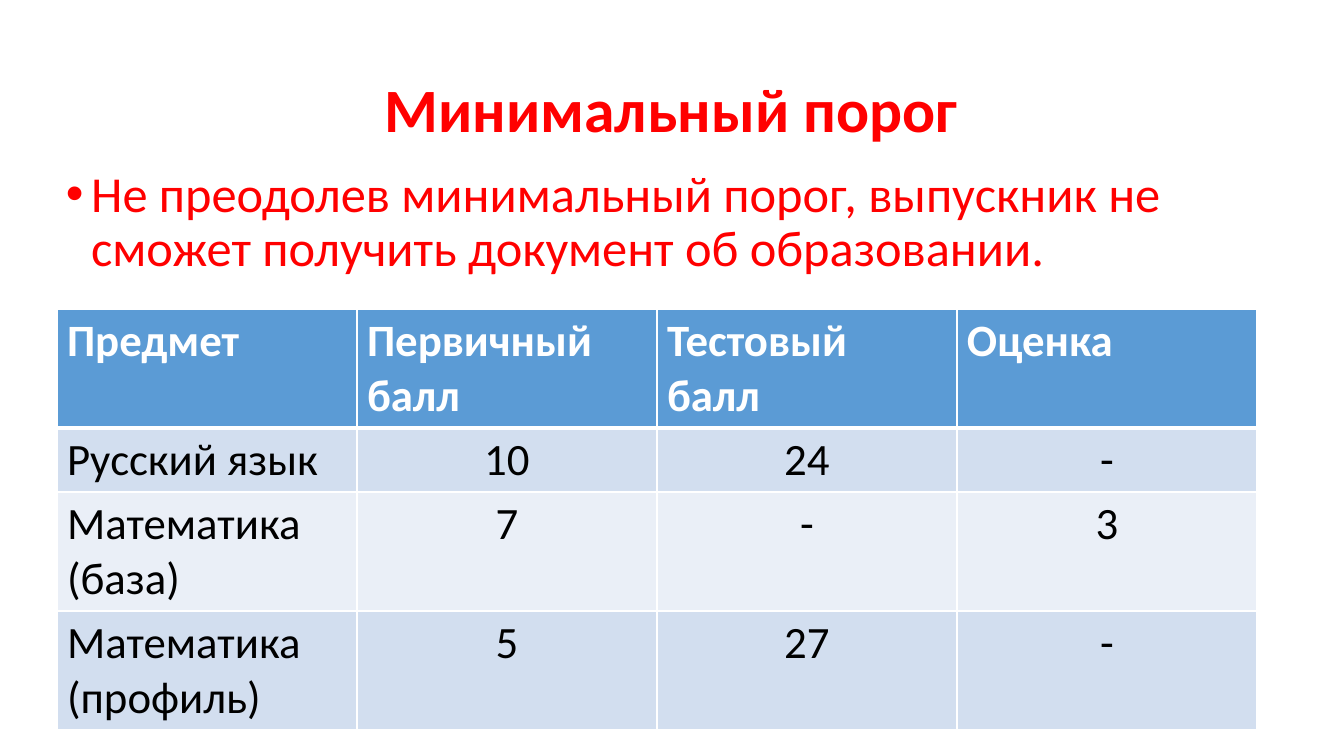
"""Builds the slide on minimum exam scores."""
from lxml import etree
from pptx import Presentation
from pptx.dml.color import RGBColor
from pptx.enum.text import MSO_ANCHOR, PP_ALIGN
from pptx.oxml.ns import qn
from pptx.util import Emu, Pt

LEFT, CENTER = PP_ALIGN.LEFT, PP_ALIGN.CENTER
TOP, MIDDLE = MSO_ANCHOR.TOP, MSO_ANCHOR.MIDDLE
PX = 914400 / 100.8
COLORS = {
    "accent": "FF0000",
    "header": "5B9BD5",
    "odd": "D2DEEF",
    "even": "EAEFF7",
    "white": "FFFFFF",
    "black": "000000",
}
SCORES = [
    ["Предмет", "Первичный балл", "Тестовый балл", "Оценка"],
    ["Русский язык", "10", "24", "-"],
    ["Математика (база)", "7", "-", "3"],
    ["Математика (профиль)", "5", "27", "-"],
]
ROW_HEIGHTS = [119, 64, 119, 119]
COLUMN_WIDTH = 300


def px(length):
    return Emu(round(length * PX))


class SlideBuilder:
    """Holds the text style and the current slide."""

    def __init__(self, slide, font):
        self.slide = slide
        self.font = font

    def format(self, paragraph, size, color, bold=False, align=LEFT):
        paragraph.alignment = align
        for run in paragraph.runs:
            run.font.name = self.font
            run.font.size = Pt(size)
            run.font.bold = bold
            run.font.color.rgb = RGBColor.from_string(COLORS[color])

    def text(self, box, words, size, color, bold=False, align=LEFT, anchor=TOP):
        frame = self.slide.shapes.add_textbox(*map(px, box)).text_frame
        frame.word_wrap = True
        frame.vertical_anchor = anchor
        frame.text = words
        paragraph = frame.paragraphs[0]
        paragraph.line_spacing = 0.9
        self.format(paragraph, size, color, bold, align)
        return paragraph

    def bullet(self, box, words, size, color):
        paragraph = self.text(box, words, size, color)
        paragraph.space_before = Pt(10)
        properties = paragraph._p.get_or_add_pPr()
        properties.set("marL", str(Pt(18)))
        properties.set("indent", str(-Pt(18)))
        etree.SubElement(properties, qn("a:buFont"), typeface="Arial")
        etree.SubElement(properties, qn("a:buChar"), char="•")

    def borders(self, cell, top, bottom):
        properties = cell._tc.get_or_add_tcPr()
        for side, width in (("L", 1), ("R", 1), ("T", top), ("B", bottom)):
            line = etree.SubElement(properties, qn(f"a:ln{side}"), w=str(Pt(width)))
            fill = etree.SubElement(line, qn("a:solidFill"))
            etree.SubElement(fill, qn("a:srgbClr"), val=COLORS["white"])

    def table(self, left, top, rows, heights, column_width, size):
        columns = len(rows[0])
        table = self.slide.shapes.add_table(
            len(rows), columns, px(left), px(top),
            px(columns * column_width), px(sum(heights))).table
        for column in table.columns:
            column.width = px(column_width)
        for r, (values, height) in enumerate(zip(rows, heights)):
            table.rows[r].height = px(height)
            header = r == 0
            band = "header" if header else "odd" if r % 2 else "even"
            for c, value in enumerate(values):
                cell = table.cell(r, c)
                cell.text = value
                self.borders(cell, 3 if r == 1 else 1, 3 if header else 1)
                cell.fill.solid()
                cell.fill.fore_color.rgb = RGBColor.from_string(COLORS[band])
                self.format(cell.text_frame.paragraphs[0], size,
                            "white" if header else "black", header,
                            LEFT if header or c == 0 else CENTER)


def main():
    deck = Presentation()
    deck.slide_width, deck.slide_height = px(1344), px(756)
    page = SlideBuilder(deck.slides.add_slide(deck.slide_layouts[6]), "Calibri")
    page.text((92, 40, 1159, 146), "Минимальный порог", 44, "accent",
              bold=True, align=CENTER, anchor=MIDDLE)
    page.bullet((56, 164, 1159, 341),
                "Не преодолев минимальный порог, выпускник не сможет "
                "получить документ об образовании.", 36, "accent")
    page.table(57, 309, SCORES, ROW_HEIGHTS, COLUMN_WIDTH, 32)
    deck.save("out.pptx")


if __name__ == "__main__":
    main()
